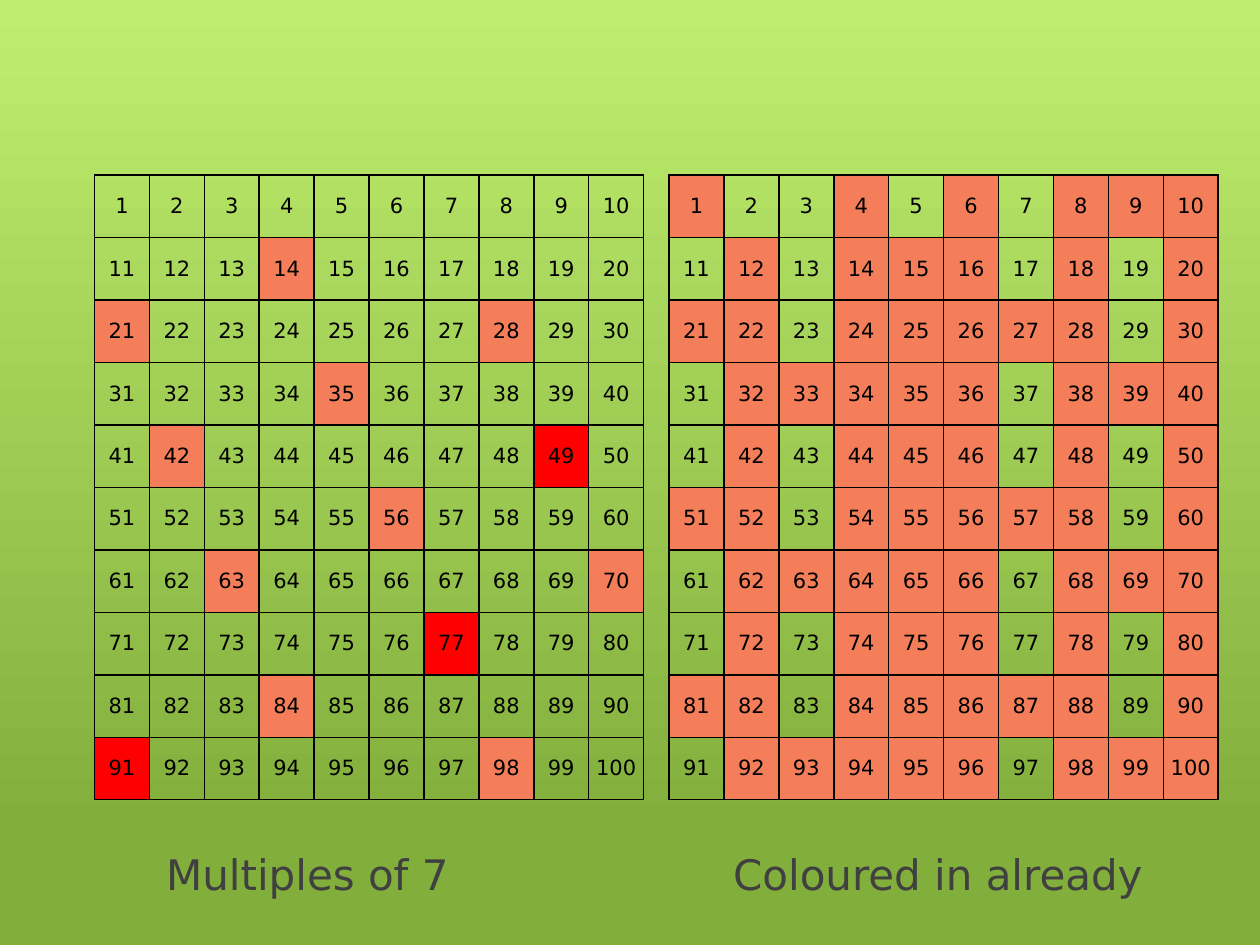
from lxml.etree import SubElement
from pptx import Presentation
from pptx.dml.color import RGBColor
from pptx.enum.text import MSO_ANCHOR as Anchor, PP_ALIGN as Align
from pptx.oxml.ns import qn
from pptx.util import Inches, Pt

FONT = "DejaVu Sans"
COLOURS = {
    "top": "BFEE6F",
    "bottom": "82AE3C",
    "caption": "404040",
    "number": "000000",
    "border": "000000",
    "crossed": "F47E5A",
    "new": "FF0000",
}
SIZE = 10
COLUMN_WIDTH, ROW_HEIGHT = 0.436, 0.496
GRID_TOP = 1.39
SMALL_PRIMES = (2, 3, 5)


def add_span(para, text, size, colour):
    span = para.add_run()
    span.text = text
    span.font.name = FONT
    span.font.size = Pt(size)
    span.font.color.rgb = RGBColor.from_string(COLOURS[colour])


def add_borders(cell):
    properties = cell._tc.get_or_add_tcPr()
    for side in ("a:lnL", "a:lnR", "a:lnT", "a:lnB"):
        line = SubElement(properties, qn(side), w=str(Pt(1)))
        fill = SubElement(line, qn("a:solidFill"))
        SubElement(fill, qn("a:srgbClr"), val=COLOURS["border"])


deck = Presentation()
deck.slide_width, deck.slide_height = Inches(10), Inches(7.5)
page = deck.slides.add_slide(deck.slide_layouts[6])

backdrop = page.background.fill
backdrop.gradient()
backdrop.gradient_angle = 270
for stop, colour, position in zip(backdrop.gradient_stops, ("top", "bottom"), (0, 0.88)):
    stop.color.rgb = RGBColor.from_string(COLOURS[colour])
    stop.position = position

# Captions: five tab stops carry the second one under the right grid
box = page.shapes.add_textbox(Inches(1.22), Inches(6.43), Inches(8.58), Inches(1.01))
box.text_frame.word_wrap = True
box.text_frame.vertical_anchor = Anchor.MIDDLE
para = box.text_frame.paragraphs[0]
tab_list = SubElement(para._p.get_or_add_pPr(), qn("a:tabLst"))
for stop in (2.5, 3, 3.5, 4, 4.5):
    SubElement(tab_list, qn("a:tab"), pos=str(Inches(stop)), algn="l")
add_span(para, "Multiples of 7\t\t\t\t\tColoured in already", 24, "caption")

# Sort the numbers: already crossed out, and multiples of 7 old or new
numbers = range(1, SIZE * SIZE + 1)
already = {1: "crossed"}
sevens = {}
for number in numbers:
    has_small_factor = any(number % prime == 0 for prime in SMALL_PRIMES)
    if has_small_factor and number not in SMALL_PRIMES:
        already[number] = "crossed"
    if number % 7 == 0 and number > 7:
        sevens[number] = "crossed" if has_small_factor else "new"

for left, shading in ((0.75, sevens), (5.31, already)):
    grid = page.shapes.add_table(
        SIZE, SIZE, Inches(left), Inches(GRID_TOP),
        Inches(SIZE * COLUMN_WIDTH), Inches(SIZE * ROW_HEIGHT),
    ).table
    grid.first_row = False
    grid.horz_banding = False
    for column in grid.columns:
        column.width = Inches(COLUMN_WIDTH)
    for row in grid.rows:
        row.height = Inches(ROW_HEIGHT)
    for number, cell in zip(numbers, grid.iter_cells()):
        add_borders(cell)
        if number in shading:
            cell.fill.solid()
            cell.fill.fore_color.rgb = RGBColor.from_string(COLOURS[shading[number]])
        else:
            cell.fill.background()
        cell.vertical_anchor = Anchor.MIDDLE
        if number == 100:
            cell.margin_left = cell.margin_right = Inches(0.04)
        para = cell.text_frame.paragraphs[0]
        para.alignment = Align.CENTER
        add_span(para, str(number), 12, "number")

deck.save("out.pptx")
